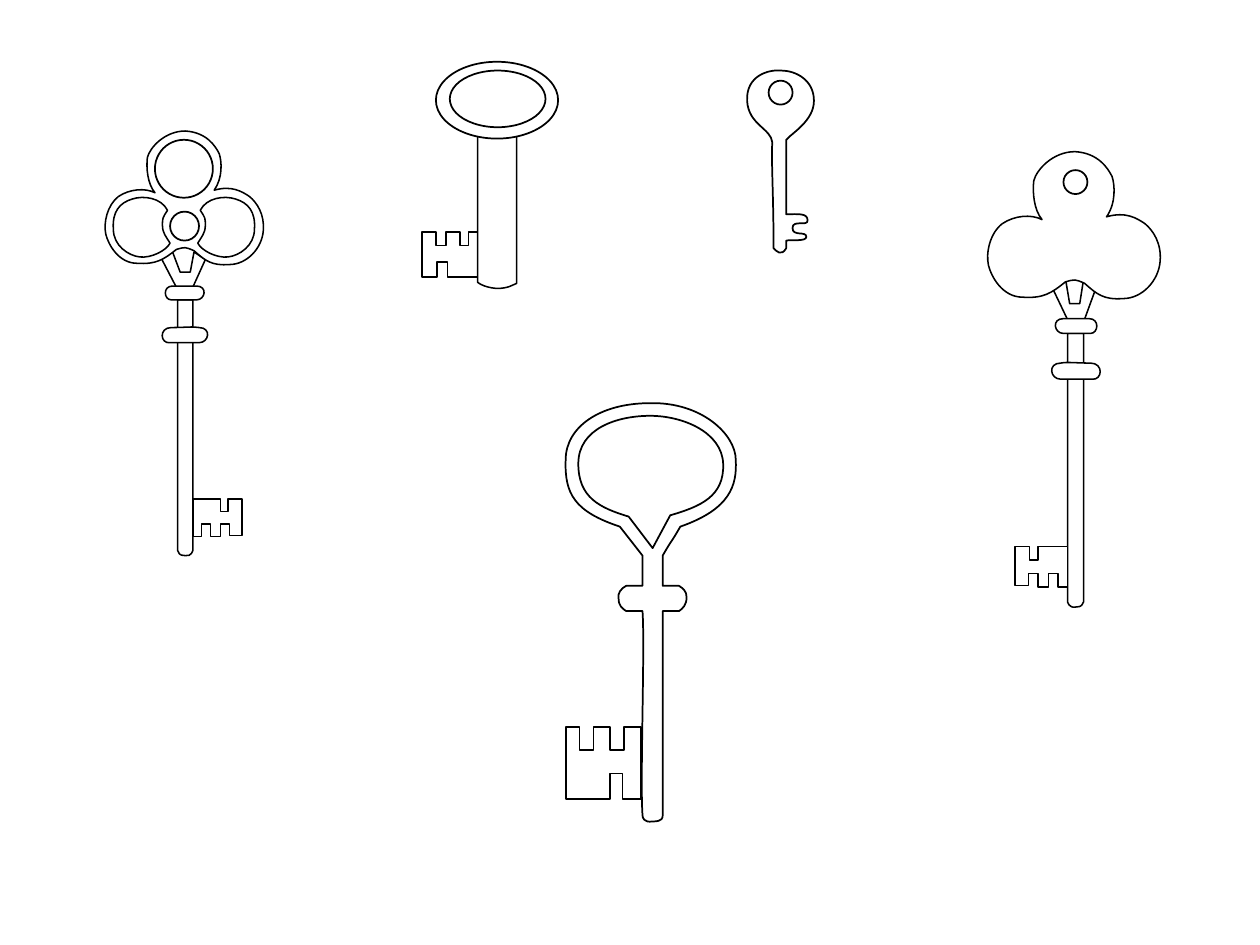
from dataclasses import dataclass

from lxml import etree
from pptx import Presentation
from pptx import util as u
from pptx.dml.color import RGBColor
from pptx.enum import shapes
from pptx.oxml.ns import qn

CM_PER_INCH = 2.54


@dataclass(frozen=True)
class Placement:
    """Scale and offset of an outline; a negative scale mirrors it."""
    scale_x: float = 1
    scale_y: float = 1
    offset_x: float = 0
    offset_y: float = 0

    def apply(self, x: float, y: float) -> tuple[u.Length, u.Length]:
        return (length(self.scale_x * x + self.offset_x),
                length(self.scale_y * y + self.offset_y))


IN_PLACE = Placement()


@dataclass(frozen=True)
class Outline:
    """Closed outline in inches: pairs are corners, sextets are Bezier curves."""
    steps: tuple
    placement: Placement = IN_PLACE
    line_width: float = 0.88
    fill: str | None = "FFFFFF"


@dataclass(frozen=True)
class Ellipse:
    left: float
    top: float
    width: float
    height: float


def length(inches: float) -> u.Length:
    return u.Cm(inches * CM_PER_INCH)


def style(shape, line_width: float, fill: str | None) -> None:
    shape.shadow.inherit = False
    if fill is None:
        shape.fill.background()
    else:
        shape.fill.solid()
        shape.fill.fore_color.rgb = RGBColor.from_string(fill)
    shape.line.color.rgb = RGBColor.from_string("000000")
    shape.line.width = u.Pt(line_width)


def bend_curves(shape, steps: tuple) -> None:
    """Merge the three segments drawn for each curve into one Bezier segment."""
    segments = iter(list(shape.element.iter(qn("a:lnTo"))))
    for step in steps[1:]:
        segment = next(segments)
        if len(step) == 2:
            continue
        curve = etree.Element(qn("a:cubicBezTo"))
        segment.addprevious(curve)
        for control in (segment, next(segments), next(segments)):
            curve.append(control[0])
            control.getparent().remove(control)


def draw_outline(group, outline: Outline) -> None:
    points = [outline.placement.apply(*step[index:index + 2])
              for step in outline.steps for index in range(0, len(step), 2)]
    builder = group.shapes.build_freeform(*points[0])
    builder.add_line_segments(points[1:], close=True)
    shape = builder.convert_to_shape()
    bend_curves(shape, outline.steps)
    style(shape, outline.line_width, outline.fill)


def draw_ellipse(group, ellipse: Ellipse) -> None:
    box = (ellipse.left, ellipse.top, ellipse.width, ellipse.height)
    shape = group.shapes.add_shape(shapes.MSO_SHAPE.OVAL, *map(length, box))
    style(shape, 1, "FFFFFF")


def draw_key(slide, parts: tuple) -> None:
    group = slide.shapes.add_group_shape()
    for part in parts:
        if isinstance(part, Ellipse):
            draw_ellipse(group, part)
        else:
            draw_outline(group, part)


# Parts shared by the two trefoil keys
TREFOIL_STEM = ((1.53, 2.38), (1.53, 4.37), (1.53, 4.37, 1.52, 4.42, 1.47, 4.41),
                (1.42, 4.41, 1.42, 4.39, 1.41, 4.37), (1.41, 2.38))
LOWER_COLLAR = ((1.58, 2.72), (1.53, 2.72, 1.47, 2.72, 1.35, 2.72),
                (1.27, 2.73, 1.26, 2.6, 1.36, 2.6), (1.47, 2.6, 1.53, 2.59, 1.58, 2.6),
                (1.68, 2.6, 1.66, 2.72, 1.58, 2.72))
UPPER_COLLAR = ((1.56, 2.38), (1.51, 2.38, 1.46, 2.38, 1.36, 2.38),
                (1.3, 2.38, 1.29, 2.27, 1.37, 2.27), (1.47, 2.27, 1.51, 2.27, 1.56, 2.27),
                (1.65, 2.27, 1.63, 2.38, 1.56, 2.38))
TREFOIL_BIT = ((1.53, 3.96), (1.75, 3.96), (1.75, 4.06), (1.81, 4.06), (1.81, 3.96),
               (1.92, 3.96), (1.92, 4.25), (1.82, 4.25), (1.82, 4.16), (1.75, 4.16),
               (1.75, 4.26), (1.67, 4.26), (1.67, 4.16), (1.6, 4.16), (1.6, 4.26),
               (1.53, 4.26))
TREFOIL_BOW = ((1.7, 1.51), (1.77, 1.41, 1.76, 1.28, 1.74, 1.22),
               (1.71, 1.16, 1.64, 1.05, 1.47, 1.04), (1.31, 1.04, 1.19, 1.17, 1.17, 1.25),
               (1.16, 1.33, 1.17, 1.46, 1.23, 1.53), (1.15, 1.49, 1.03, 1.5, 0.94, 1.56),
               (0.85, 1.63, 0.82, 1.77, 0.84, 1.86), (0.86, 1.94, 0.94, 2.09, 1.09, 2.09),
               (1.24, 2.1, 1.3, 2.06, 1.4, 1.98), (1.47, 1.96, 1.47, 1.96, 1.54, 1.99),
               (1.63, 2.07, 1.68, 2.11, 1.82, 2.1), (1.96, 2.1, 2.08, 1.97, 2.09, 1.83),
               (2.1, 1.7, 2.04, 1.61, 1.98, 1.56), (1.92, 1.52, 1.84, 1.47, 1.7, 1.51))
PETAL = ((0.9, 1.82), (0.89, 1.68, 0.95, 1.61, 1.05, 1.58),
         (1.14, 1.55, 1.28, 1.57, 1.33, 1.67), (1.29, 1.73, 1.29, 1.73, 1.29, 1.79),
         (1.29, 1.85, 1.32, 1.88, 1.35, 1.93), (1.32, 1.99, 1.2, 2.05, 1.11, 2.04),
         (1.02, 2.03, 0.9, 1.95, 0.9, 1.82))
LEFT_NECK = ((1.28, 2.05), (1.4, 2.28), (1.53, 2.28), (1.63, 2.06), (1.54, 2),
             (1.51, 2.16), (1.43, 2.16), (1.37, 2))
RIGHT_NECK = ((8.69, 2.31), (8.61, 2.53), (8.47, 2.53), (8.36, 2.3), (8.46, 2.23),
              (8.49, 2.41), (8.57, 2.41), (8.6, 2.22))

OVAL_BIT = ((3.8, 2.2), (3.55, 2.2), (3.55, 2.08), (3.47, 2.08), (3.47, 2.2),
            (3.35, 2.2), (3.35, 1.84), (3.46, 1.84), (3.46, 1.95), (3.54, 1.95),
            (3.54, 1.84), (3.65, 1.84), (3.65, 1.95), (3.72, 1.95), (3.72, 1.84),
            (3.8, 1.84))
OVAL_STEM = ((3.79, 2.24), (3.79, 2.24, 3.83, 2.28, 3.94, 2.29),
             (4.04, 2.29, 4.07, 2.26, 4.1, 2.25), (4.1, 1.06), (3.79, 1.06))

LARGE_BIT = ((4.49, 6.34), (4.84, 6.34), (4.84, 6.14), (4.94, 6.14), (4.94, 6.34),
             (5.09, 6.34), (5.09, 5.77), (4.95, 5.77), (4.95, 5.95), (4.84, 5.95),
             (4.84, 5.77), (4.71, 5.77), (4.71, 5.95), (4.6, 5.95), (4.6, 5.77),
             (4.49, 5.77))
LARGE_BODY = ((5.4, 4.18), (5.8, 4.04, 5.85, 3.85, 5.84, 3.65),
              (5.84, 3.45, 5.57, 3.19, 5.16, 3.2), (4.76, 3.2, 4.49, 3.39, 4.49, 3.65),
              (4.48, 3.92, 4.56, 4.06, 4.92, 4.18), (5.1, 4.41), (5.1, 4.65), (4.97, 4.65),
              (4.93, 4.67, 4.9, 4.71, 4.91, 4.75), (4.91, 4.81, 4.94, 4.83, 4.97, 4.85),
              (5.1, 4.85), (5.12, 5.12, 5.08, 6.19, 5.1, 6.47),
              (5.1, 6.49, 5.11, 6.53, 5.18, 6.52), (5.26, 6.52, 5.26, 6.49, 5.26, 6.47),
              (5.26, 4.85), (5.39, 4.85), (5.42, 4.83, 5.45, 4.8, 5.45, 4.74),
              (5.45, 4.69, 5.42, 4.67, 5.39, 4.65), (5.26, 4.65), (5.26, 4.41),
              (5.34, 4.27, 5.32, 4.32, 5.4, 4.18))
LARGE_OPENING = ((5.32, 4.09), (5.56, 4.02, 5.75, 3.94, 5.74, 3.68),
                 (5.73, 3.43, 5.42, 3.3, 5.16, 3.3), (4.9, 3.3, 4.59, 3.4, 4.59, 3.68),
                 (4.59, 3.95, 4.76, 4.03, 4.99, 4.1), (5.18, 4.35))

SMALL_BODY = ((6.29, 1.81), (6.29, 1.74, 6.41, 1.8, 6.41, 1.75),
              (6.41, 1.69, 6.34, 1.7, 6.24, 1.7), (6.24, 1.11),
              (6.28, 1.06, 6.46, 0.96, 6.46, 0.8), (6.46, 0.63, 6.31, 0.56, 6.2, 0.56),
              (6.1, 0.55, 5.92, 0.6, 5.93, 0.8), (5.94, 0.99, 6.12, 1.02, 6.13, 1.13),
              (6.12, 1.26, 6.14, 1.54, 6.14, 1.97), (6.16, 1.99, 6.2, 2.04, 6.24, 1.97),
              (6.24, 1.91), (6.27, 1.9, 6.4, 1.92, 6.4, 1.88),
              (6.4, 1.83, 6.29, 1.88, 6.29, 1.81))


def trefoil_key(neck: tuple, shaft: Placement, bow: Placement, details: tuple) -> tuple:
    shaft_parts = (TREFOIL_STEM, LOWER_COLLAR, TREFOIL_BIT, UPPER_COLLAR)
    return (Outline(neck), *(Outline(steps, shaft) for steps in shaft_parts),
            Outline(TREFOIL_BOW, bow), *details)


def main() -> None:
    presentation = Presentation()
    presentation.slide_width = length(10)
    presentation.slide_height = length(7.5)
    slide = presentation.slides.add_slide(presentation.slide_layouts[6])

    petals = (Outline(PETAL), Ellipse(1.35, 1.68, 0.23, 0.23),
              Ellipse(1.23, 1.11, 0.46, 0.46),
              Outline(PETAL, Placement(scale_x=-1, offset_x=2.92)))
    keys = (
        (Outline(OVAL_BIT), Outline(OVAL_STEM),
         Ellipse(3.46, 0.49, 0.97, 0.61), Ellipse(3.57, 0.56, 0.76, 0.45)),
        trefoil_key(LEFT_NECK, IN_PLACE, IN_PLACE, petals),
        tuple(Outline(steps, line_width=1)
              for steps in (LARGE_BIT, LARGE_BODY, LARGE_OPENING)),
        trefoil_key(RIGHT_NECK, Placement(-1.07, 1.07, 10.11, 0.1),
                    Placement(1.09, 1.1, 6.93, 0.06), (Ellipse(8.44, 1.35, 0.19, 0.19),)),
        (Outline(SMALL_BODY, line_width=1, fill=None), Ellipse(6.1, 0.64, 0.19, 0.19)),
    )
    for parts in keys:
        draw_key(slide, parts)
    presentation.save("out.pptx")


if __name__ == "__main__":
    main()
